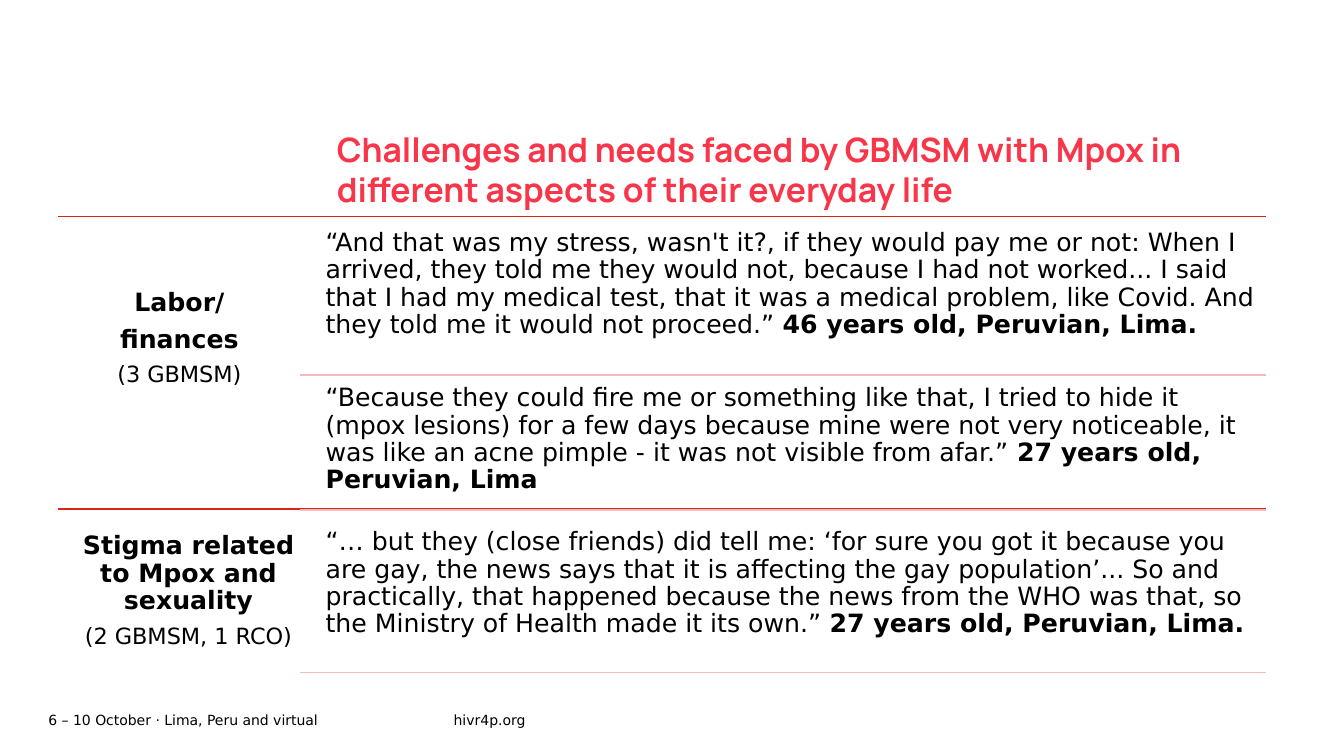
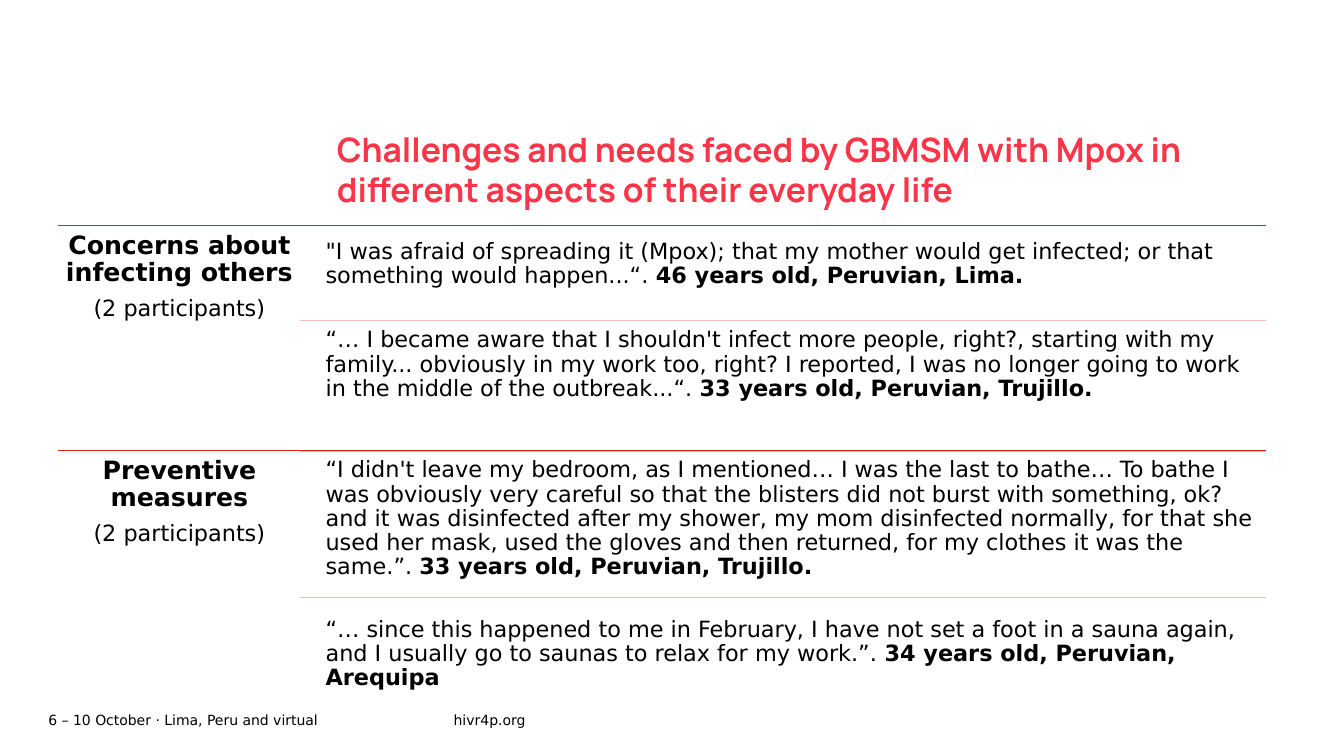
from pptx import Presentation
from pptx import util as u
from pptx.dml.color import RGBColor
from pptx.enum import shapes, text
from lxml import etree

RED = RGBColor(0xDB, 0x24, 0x15)
PINK = RGBColor(0xEE, 0xBE, 0xBD)
TITLE_RED = RGBColor(0xF9, 0x35, 0x49)
BLACK = RGBColor(0, 0, 0)
BODY_FONT = "DejaVu Sans"
TITLE_FONT = "Manrope"
A = "http://schemas.openxmlformats.org/drawingml/2006/main"

TITLE = ("Challenges and needs faced by GBMSM with Mpox in "
         "different aspects of their everyday life")
LEFT, RULE_LEFT, RIGHT = 0.58, 2.98, 12.56
QUOTE_LEFT = 3.16
LABEL_W, QUOTE_W = 2.4, RIGHT - QUOTE_LEFT

# rules: (y, colour); labels: (x, y, heading lines, count); quotes: (y, words, speaker)
SLIDES = [
    dict(
        quote_size=18,
        rules=[(2.15, RED), (3.72, PINK), (5.05, RED), (5.06, PINK), (6.67, PINK)],
        labels=[
            (LEFT, 2.8, ["Labor/", "finances"], "(3 GBMSM)"),
            (0.67, 5.22, ["Stigma related to Mpox and sexuality"], "(2 GBMSM, 1 RCO)"),
        ],
        quotes=[
            (2.21, "“And that was my stress, wasn't it?, if they would pay me or not: "
             "When I arrived, they told me they would not, because I had not worked... "
             "I said that I had my medical test, that it was a medical problem, like "
             "Covid. And they told me it would not proceed.” ",
             "46 years old, Peruvian, Lima."),
            (3.75, "“Because they could fire me or something like that, I tried to hide "
             "it (mpox lesions) for a few days because mine were not very noticeable, "
             "it was like an acne pimple - it was not visible from afar.” ",
             "27 years old, Peruvian, Lima"),
            (5.18, "“… but they (close friends) did tell me: ‘for sure you got it because "
             "you are gay, the news says that it is affecting the gay population’... So "
             "and practically, that happened because the news from the WHO was that, so "
             "the Ministry of Health made it its own.” ",
             "27 years old, Peruvian, Lima."),
        ],
    ),
    dict(
        quote_size=16,
        rules=[(2.24, RED), (3.18, PINK), (4.48, PINK), (4.47, RED), (5.93, PINK)],
        labels=[
            (LEFT, 2.24, ["Concerns about infecting others"], "(2 participants)"),
            (LEFT, 4.47, ["Preventive measures"], "(2 participants)"),
        ],
        quotes=[
            (2.31, "\"I was afraid of spreading it (Mpox); that my mother would get "
             "infected; or that something would happen...“. ",
             "46 years old, Peruvian, Lima."),
            (3.19, "“… I became aware that I shouldn't infect more people, right?, "
             "starting with my family... obviously in my work too, right? I reported, I "
             "was no longer going to work in the middle of the outbreak...“. ",
             "33 years old, Peruvian, Trujillo."),
            (4.48, "“I didn't leave my bedroom, as I mentioned… I was the last to bathe… "
             "To bathe I was obviously very careful so that the blisters did not burst "
             "with something, ok? and it was disinfected after my shower, my mom "
             "disinfected normally, for that she used her mask, used the gloves and "
             "then returned, for my clothes it was the same.”. ",
             "33 years old, Peruvian, Trujillo."),
            (6.06, "“… since this happened to me in February, I have not set a foot in a "
             "sauna again, and I usually go to saunas to relax for my work.”. ",
             "34 years old, Peruvian, Arequipa"),
        ],
    ),
]


def add_text(p, words, size=18, bold=False, color=BLACK, font=BODY_FONT,
             align=text.PP_ALIGN.LEFT, spacing=0.9, after=7):
    p.alignment, p.line_spacing, p.space_after = align, spacing, u.Pt(after)
    r = p.add_run()
    r.text = words
    r.font.size, r.font.bold, r.font.name = u.Pt(size), bold, font
    r.font.color.rgb = color


def add_box(slide, x, y, w, h, inset=0.07):
    sp = slide.shapes.add_textbox(u.Inches(x), u.Inches(y), u.Inches(w), u.Inches(h))
    tf = sp.text_frame
    tf.word_wrap = True
    tf.margin_left = tf.margin_right = tf.margin_top = tf.margin_bottom = u.Inches(inset)
    return sp


prs = Presentation()
prs.slide_width, prs.slide_height = u.Inches(13.33), u.Inches(7.5)

# Shared title place on the layout
layout = prs.slide_layouts.get_by_name("Title Only")
sp = layout.placeholders[0]
sp.left, sp.top = u.Inches(3.24), u.Inches(1.23)
sp.width, sp.height = u.Inches(9.32), u.Inches(0.91)
sp.text_frame.vertical_anchor = text.MSO_ANCHOR.TOP
sp.text_frame.auto_size = text.MSO_AUTO_SIZE.NONE

slides = [prs.slides.add_slide(layout) for _ in SLIDES]

# Shared footer, moved from the first slide to the layout
for x, w, words in [(0.48, 4.02, "6 – 10 October · Lima, Peru and virtual"),
                    (4.5, 1.93, "hivr4p.org")]:
    sp = add_box(slides[0], x, 7.02, w, 0.24, inset=0)
    sp.text_frame.vertical_anchor = text.MSO_ANCHOR.MIDDLE
    add_text(sp.text_frame.paragraphs[0], words, size=10, spacing=1, after=0)
    layout.shapes.element.append(sp.element)

for slide, content in zip(slides, SLIDES):
    add_text(slide.shapes.title.text_frame.paragraphs[0], TITLE, size=24, bold=True,
             color=TITLE_RED, font=TITLE_FONT, spacing=1, after=0)

    # Rules: red across both columns, pink under the quotes only
    for y, color in content["rules"]:
        x = LEFT if color == RED else RULE_LEFT
        line = slide.shapes.add_connector(shapes.MSO_CONNECTOR.STRAIGHT, u.Inches(x),
                                          u.Inches(y), u.Inches(RIGHT), u.Inches(y))
        line.line.color.rgb, line.line.width = color, u.Pt(1)
        etree.SubElement(line.element.spPr, f"{{{A}}}effectLst")

    # Topic labels
    for x, y, heading, count in content["labels"]:
        tf = add_box(slide, x, y, LABEL_W, 1.34).text_frame
        for i, words in enumerate(heading + [count]):
            p = tf.add_paragraph() if i else tf.paragraphs[0]
            is_count = i == len(heading)
            add_text(p, words, size=16 if is_count else 18, bold=not is_count,
                     align=text.PP_ALIGN.CENTER)

    # Quotes with their speakers
    for y, words, speaker in content["quotes"]:
        p = add_box(slide, QUOTE_LEFT, y, QUOTE_W, 1.24).text_frame.paragraphs[0]
        add_text(p, words, size=content["quote_size"])
        add_text(p, speaker, size=content["quote_size"], bold=True)

prs.save("out.pptx")
